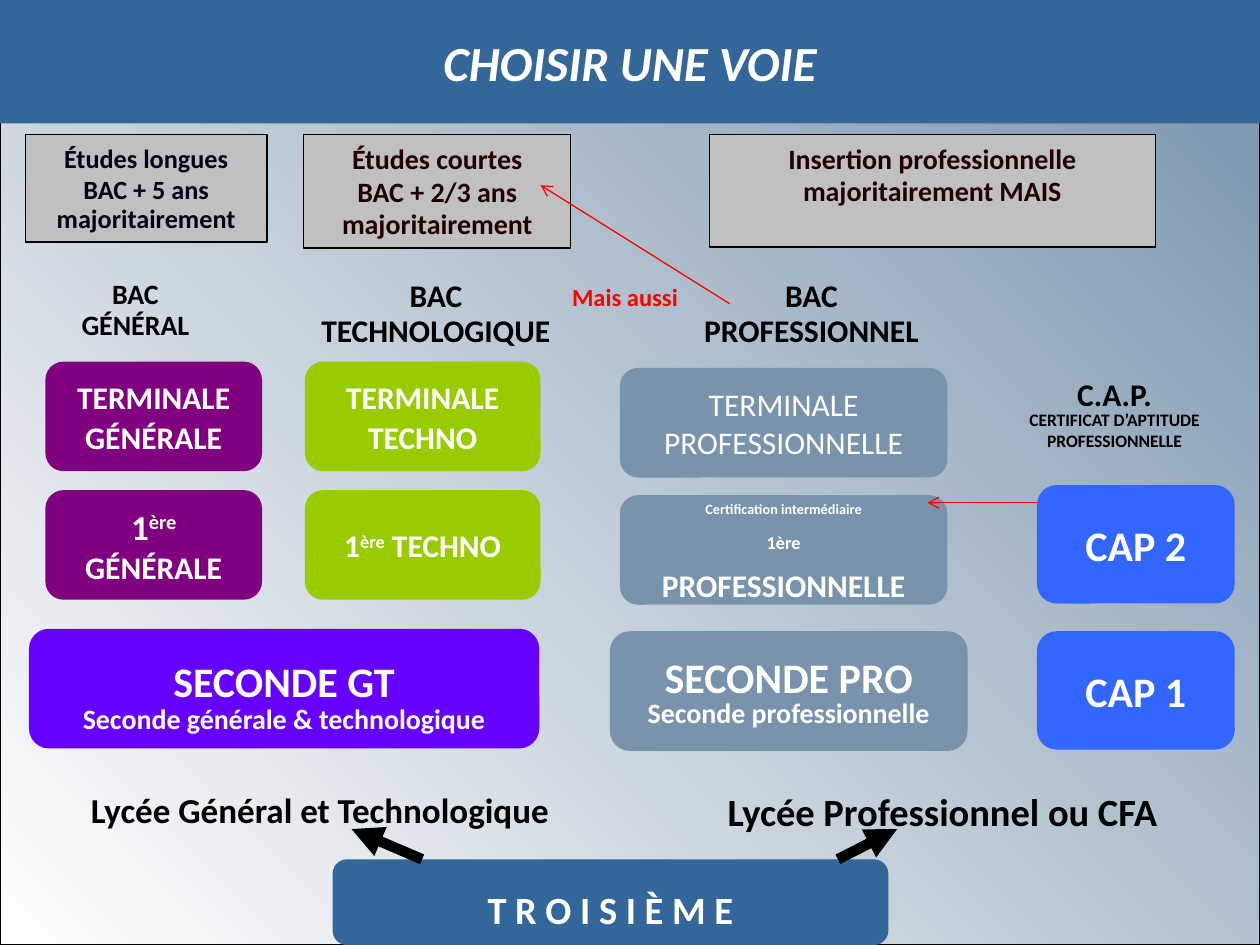
from lxml.etree import SubElement
from pptx import Presentation
from pptx.dml.color import RGBColor
from pptx.enum.shapes import MSO_CONNECTOR, MSO_SHAPE
from pptx.enum.text import MSO_ANCHOR, PP_ALIGN
from pptx.oxml.ns import qn
from pptx.util import Inches, Pt

FONT = "Calibri"
WHITE, BLACK, RED = "FFFFFF", "000000", "FF0000"
BLUE, SLATE, GREY = "336699", "7993AC", "C0C0C0"
PURPLE, GREEN, VIOLET, CAP_BLUE = "800080", "99CC00", "6600FF", "3366FF"

# Content: each line is (text, size, line spacing); text after ^ is superscript up to the next ^
TITLE = "CHOISIR UNE VOIE"

# Tracks: left, width, height, fill, bold, top of first step, pitch, steps from top to bottom
TRACKS = [
    (0.36, 1.72, 0.87, PURPLE, True, 2.87, 1.02, [
        [("TERMINALE", 18, 1.02), ("GÉNÉRALE", 18, 1.07)],
        [("1^ère", 20, 1.02), ("GÉNÉRALE", 18, 1.02)]]),
    (2.42, 1.87, 0.87, GREEN, True, 2.87, 1.02, [
        [("TERMINALE", 18, 1.02), ("TECHNO", 18, 1.07)],
        [("1^ère^ TECHNO", 18, 1.02)]]),
    (4.92, 2.6, 0.87, SLATE, False, 2.92, 1.01, [
        [("TERMINALE", 18, 1.02), ("PROFESSIONNELLE", 18, 1.02)]]),
    (4.92, 2.6, 0.87, SLATE, True, 3.93, 1.01, [
        [("^Certification intermédiaire", 14, 1.02), ("^1ère", 18, 1.02),
         ("PROFESSIONNELLE", 18, 1.02)]]),
    (8.23, 1.57, 0.94, CAP_BLUE, True, 3.85, 1.16, [
        [("CAP 2", 24, 1.02)],
        [("CAP 1", 24, 1.02)]]),
]

# Entry classes: left, top, width, height, fill, top inset, lines
ENTRIES = [
    (0.23, 4.99, 4.05, 0.95, VIOLET, 0.14,
     [("SECONDE GT", 24, 1.08), ("Seconde générale & technologique", 16, 0.87)]),
    (4.84, 5.01, 2.84, 0.95, SLATE, 0.09,
     [("SECONDE PRO", 24, 0.92), ("Seconde professionnelle", 16, 0.77)]),
    (2.64, 6.82, 4.41, 0.68, BLUE, 0.06, [("T R O I S I È M E", 22, 1.29)]),
]

# Outcomes: left, width, height, text colour, lines
OUTCOMES = [
    (0.2, 1.92, 0.85, "000018",
     [("Études longues", 15, 0.93), ("BAC + 5 ans", 15, 0.99), ("majoritairement", 15, 0.93)]),
    (2.41, 2.12, 0.9, "220000",
     [("Études courtes", 16, 0.93), ("BAC + 2/3 ans", 16, 0.99), ("majoritairement", 16, 0.93)]),
    (5.63, 3.54, 0.89, "220000",
     [("Insertion professionnelle majoritairement MAIS", 16, 0.93)]),
]

# Labels: left, top, width, height, colour, alignment, lines
LABELS = [
    (0.49, 2.16, 1.17, 0.62, BLACK, PP_ALIGN.CENTER,
     [("BAC", 16, 0.93), ("GÉNÉRAL", 16, 0.93)]),
    (2.16, 2.16, 2.6, 0.68, BLACK, PP_ALIGN.CENTER,
     [("BAC", 18, 0.93), ("TECHNOLOGIQUE", 18, 0.93)]),
    (5.37, 2.16, 2.14, 0.68, BLACK, PP_ALIGN.CENTER,
     [("BAC", 18, 0.93), ("PROFESSIONNEL", 18, 0.93)]),
    (7.94, 2.91, 1.81, 0.84, BLACK, PP_ALIGN.CENTER,
     [("C.A.P.", 18, 1.02), ("CERTIFICAT D’APTITUDE", 10, 0.84),
      ("PROFESSIONNELLE", 10, 0.99)]),
    (0.12, 6.19, 4.84, 0.55, BLACK, PP_ALIGN.CENTER,
     [("Lycée Général et Technologique", 20, 1.02)]),
    (5.53, 6.19, 3.9, 0.5, BLACK, PP_ALIGN.CENTER,
     [("Lycée Professionnel ou CFA", 22, 1.02)]),
    (4.45, 2.18, 1.19, 0.57, RED, PP_ALIGN.LEFT, [("Mais aussi", 14, 1.0)]),
]

# Arrows: start, end, colour, width, head
ARROWS = [
    ((6.65, 6.82), (7.12, 6.58), BLACK, 6, "triangle"),
    ((3.35, 6.82), (2.79, 6.58), BLACK, 6, "triangle"),
    ((5.79, 2.41), (4.29, 1.47), RED, 0.75, "arrow"),
    ((8.23, 3.99), (7.36, 3.99), RED, 0.75, "arrow"),
]


def rgb(code):
    return RGBColor.from_string(code)


def write(shape, lines, color, bold=True, align=PP_ALIGN.CENTER,
          anchor=MSO_ANCHOR.MIDDLE, insets=(0.12, 0.06, 0.06)):
    side, top, bottom = insets
    frame = shape.text_frame
    frame.word_wrap = True
    frame.vertical_anchor = anchor
    frame.margin_left = frame.margin_right = Inches(side)
    frame.margin_top, frame.margin_bottom = Inches(top), Inches(bottom)
    for index, (text, size, spacing) in enumerate(lines):
        paragraph = frame.add_paragraph() if index else frame.paragraphs[0]
        paragraph.alignment = align
        paragraph.line_spacing = spacing
        font = paragraph.font
        font.name, font.size, font.bold = FONT, Pt(size), bold
        font.color.rgb = rgb(color)
        for part, piece in enumerate(text.split("^")):
            if piece:
                run = paragraph.add_run()
                run.text = piece
                if part % 2:
                    run.font._element.set("baseline", "30000")


def add_box(slide, kind, left, top, width, height, fill=None, line=None):
    shape = slide.shapes.add_shape(kind, *map(Inches, (left, top, width, height)))
    shape.shadow.inherit = False
    if fill:
        shape.fill.solid()
        shape.fill.fore_color.rgb = rgb(fill)
    if line:
        shape.line.color.rgb = rgb(line)
        shape.line.width = Pt(0.75)
    else:
        shape.line.fill.background()
    return shape


def add_arrow(slide, start, end, color, width, head):
    arrow = slide.shapes.add_connector(MSO_CONNECTOR.STRAIGHT, *map(Inches, start + end))
    arrow.line.color.rgb = rgb(color)
    arrow.line.width = Pt(width)
    SubElement(arrow.line._get_or_add_ln(), qn("a:tailEnd"), type=head)
    SubElement(arrow.element.spPr, qn("a:effectLst"))


def main():
    presentation = Presentation()
    presentation.slide_width, presentation.slide_height = Inches(10), Inches(7.5)
    slide = presentation.slides.add_slide(presentation.slide_layouts[5])

    # Background panel
    panel = add_box(slide, MSO_SHAPE.RECTANGLE, 0, 0, 10, 7.5, line=BLACK)
    panel.fill.gradient()
    panel.fill.gradient_angle = 225
    for stop, color in zip(panel.fill.gradient_stops, (SLATE, WHITE)):
        stop.color.rgb = rgb(color)

    # Title band, brought in front of the panel
    title = slide.shapes.title
    title.left, title.top, title.width, title.height = map(Inches, (0, 0, 10, 0.98))
    title.fill.solid()
    title.fill.fore_color.rgb = rgb(BLUE)
    write(title, [(TITLE, 28, 1.0)], WHITE, insets=(0.1, 0.05, 0.05))
    title.text_frame.paragraphs[0].font.italic = True
    panel.element.addnext(title.element)

    # Classes
    for left, top, width, height, fill, inset, lines in ENTRIES:
        box = add_box(slide, MSO_SHAPE.ROUNDED_RECTANGLE, left, top, width, height, fill)
        write(box, lines, WHITE, insets=(0.12, inset, 0.06))
    for left, width, height, fill, bold, top, pitch, steps in TRACKS:
        for row, lines in enumerate(steps):
            box = add_box(slide, MSO_SHAPE.ROUNDED_RECTANGLE,
                          left, top + row * pitch, width, height, fill)
            write(box, lines, WHITE, bold)

    # Outcomes
    for left, width, height, color, lines in OUTCOMES:
        box = add_box(slide, MSO_SHAPE.RECTANGLE, left, 1.07, width, height, GREY, BLACK)
        write(box, lines, color, anchor=MSO_ANCHOR.TOP, insets=(0.1, 0.08, 0.05))

    # Labels and arrows
    for left, top, width, height, color, align, lines in LABELS:
        label = slide.shapes.add_textbox(*map(Inches, (left, top, width, height)))
        write(label, lines, color, align=align, anchor=MSO_ANCHOR.TOP,
              insets=(0.09, 0.06, 0.05))
    for arrow in ARROWS:
        add_arrow(slide, *arrow)

    presentation.save("out.pptx")


if __name__ == "__main__":
    main()
